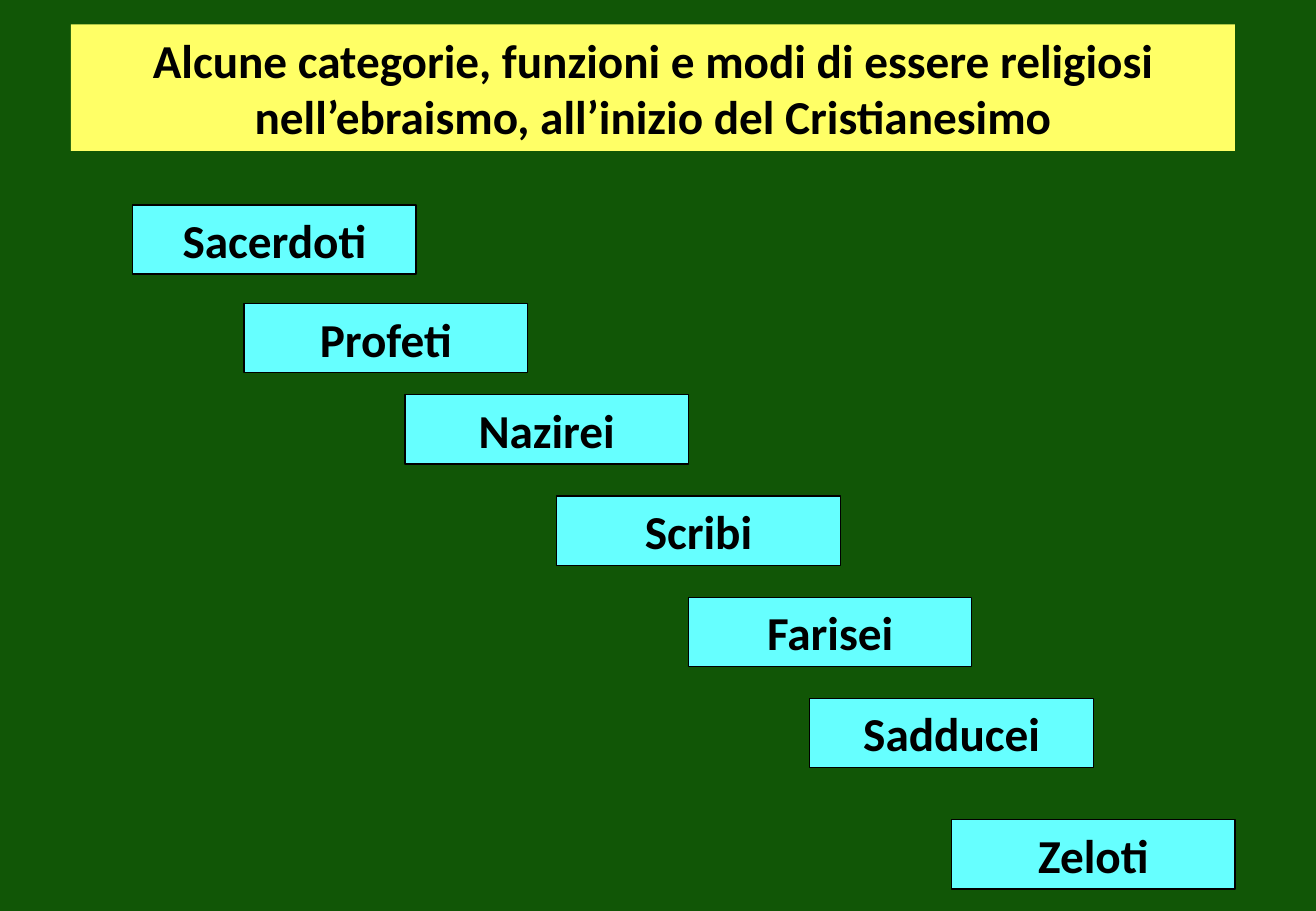
"""Build a slide with a staircase of religious categories in Judaism."""
from dataclasses import dataclass

from pptx import Presentation
from pptx.dml.color import RGBColor
from pptx.enum.shapes import MSO_SHAPE
from pptx.enum.text import MSO_ANCHOR, MSO_AUTO_SIZE, PP_ALIGN
from pptx.util import Inches, Pt

RECTANGLE = MSO_SHAPE.RECTANGLE
MIDDLE = MSO_ANCHOR.MIDDLE
NO_AUTOFIT = MSO_AUTO_SIZE.NONE
CENTER = PP_ALIGN.CENTER


@dataclass(frozen=True)
class Theme:
    background: RGBColor = RGBColor(0x11, 0x56, 0x06)
    title_fill: RGBColor = RGBColor(0xFF, 0xFF, 0x66)
    step_fill: RGBColor = RGBColor(0x66, 0xFF, 0xFF)
    ink: RGBColor = RGBColor(0, 0, 0)
    font: str = "Calibri"
    size: Pt = Pt(28)
    border: Pt = Pt(0.75)


theme = Theme()
COLUMNS, ROWS = 130, 90
STEP_WIDTH, STEP_HEIGHT = 28, 6.84
STEPS = [
    ("Sacerdoti", 13.1, 20.25),
    ("Profeti", 24.1, 30),
    ("Nazirei", 40, 39),
    ("Scribi", 55, 49),
    ("Farisei", 68, 59),
    ("Sadducei", 80, 69),
    ("Zeloti", 94, 81),
]

prs = Presentation()
prs.slide_width, prs.slide_height = Inches(10.83), Inches(7.5)
col, row = prs.slide_width / COLUMNS, prs.slide_height / ROWS


def place(sp, left, top, width, height):
    """Put a shape on the grid."""
    sp.left, sp.top = round(left * col), round(top * row)
    sp.width, sp.height = round(width * col), round(height * row)


def fill_box(sp, text, color):
    """Colour a box and write its bold centred text."""
    sp.fill.solid()
    sp.fill.fore_color.rgb = color
    tf = sp.text_frame
    tf.word_wrap = True
    tf.auto_size = NO_AUTOFIT
    tf.vertical_anchor = MIDDLE
    p = tf.paragraphs[0]
    p.alignment = CENTER
    r = p.add_run()
    r.text = text
    r.font.name = theme.font
    r.font.size = theme.size
    r.font.bold = True
    r.font.color.rgb = theme.ink


s = prs.slides.add_slide(prs.slide_layouts[5])
s.background.fill.solid()
s.background.fill.fore_color.rgb = theme.background

title = s.shapes.title
place(title, 7, 2.4, 115, 12.5)
fill_box(
    title,
    "Alcune categorie, funzioni e modi di essere religiosi "
    "nell’ebraismo, all’inizio del Cristianesimo",
    theme.title_fill,
)

for name, left, top in STEPS:
    sp = s.shapes.add_shape(RECTANGLE, 0, 0, 0, 0)
    place(sp, left, top, STEP_WIDTH, STEP_HEIGHT)
    sp.shadow.inherit = False
    sp.line.color.rgb = theme.ink
    sp.line.width = theme.border
    fill_box(sp, name, theme.step_fill)

prs.save("out.pptx")
